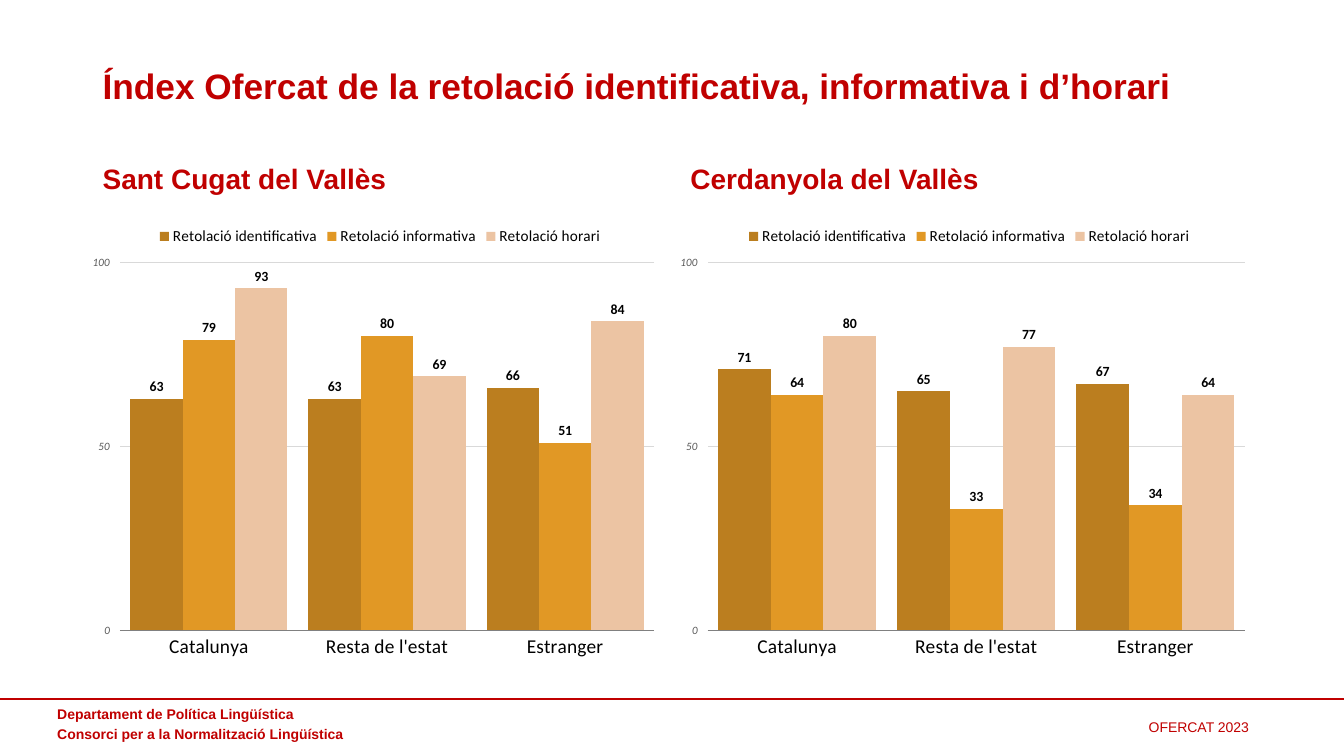
from lxml.etree import SubElement
from pptx import Presentation
from pptx.chart.data import CategoryChartData
from pptx.dml.color import RGBColor
from pptx.enum.chart import (XL_CHART_TYPE, XL_LABEL_POSITION,
                             XL_LEGEND_POSITION, XL_TICK_MARK)
from pptx.enum.shapes import MSO_CONNECTOR
from pptx.enum.text import MSO_ANCHOR, PP_ALIGN
from pptx.oxml import parse_xml
from pptx.oxml.ns import nsdecls, qn
from pptx.util import Pt

COLORS = {"red": "C00000", "black": "000000", "gray": "595959",
          "axis": "808080", "grid": "D9D9D9"}
CATS = ["Catalunya", "Resta de l'estat", "Estranger"]
SERIES = [("Retolació identificativa", "BB7E1F"),
          ("Retolació informativa", "E19825"),
          ("Retolació horari", "ECC4A3")]
# Town, left, width, values by series
TOWNS = [
    ("Sant Cugat del Vallès", 66.2, 406,
     [(63, 63, 66), (79, 80, 51), (93, 69, 84)]),
    ("Cerdanyola del Vallès", 486, 408.2,
     [(71, 65, 67), (64, 33, 34), (80, 77, 64)]),
]
PLOT = {"x": 0.037, "y": 0.093, "w": 0.951, "h": 0.732}
WIDTH, HEIGHT = 960, 540
RULE_TOP = 499


def rgb(code):
    return RGBColor.from_string(code)


def set_font(font, size, color, name="Calibri", bold=False, italic=False):
    font.size = Pt(size)
    font.name = name
    font.bold = bold
    font.italic = italic
    font.color.rgb = rgb(COLORS[color])


def set_line(line, color, width):
    line.color.rgb = rgb(COLORS[color])
    line.width = Pt(width)


def add_text(slide, box, lines, size, bold=True, align=PP_ALIGN.LEFT,
             anchor=MSO_ANCHOR.TOP, gap=0.9):
    frame = slide.shapes.add_textbox(*map(Pt, box)).text_frame
    frame.word_wrap = True
    frame.vertical_anchor = anchor
    frame.text = "\n".join(lines)
    for para in frame.paragraphs:
        para.alignment = align
        para.line_spacing = gap
        for run in para.runs:
            set_font(run.font, size, "red", "Arial", bold)


def add_rule(slide):
    rule = slide.shapes.add_connector(
        MSO_CONNECTOR.STRAIGHT, Pt(0), Pt(RULE_TOP), Pt(WIDTH), Pt(RULE_TOP))
    set_line(rule.line, "red", 1.5)
    SubElement(rule.element.spPr, qn("a:effectLst"))


def set_frame(chart):
    """Clear the chart's background and fix the inner plot area."""
    root = chart.element
    root.find(qn("c:chart")).addnext(parse_xml(
        f'<c:spPr {nsdecls("c", "a")}><a:noFill/>'
        '<a:ln><a:noFill/></a:ln></c:spPr>'))
    area = root.find(".//" + qn("c:plotArea"))
    for old in area.findall(qn("c:layout")):
        area.remove(old)
    modes = '<c:xMode val="edge"/><c:yMode val="edge"/>'
    sizes = "".join(f'<c:{key} val="{val}"/>' for key, val in PLOT.items())
    area.insert(0, parse_xml(
        f'<c:layout {nsdecls("c")}><c:manualLayout>'
        f'<c:layoutTarget val="inner"/>{modes}{sizes}'
        '</c:manualLayout></c:layout>'))


def style_axes(chart):
    cat = chart.category_axis
    cat.major_tick_mark = XL_TICK_MARK.NONE
    set_font(cat.tick_labels.font, 14, "black")
    set_line(cat.format.line, "axis", 0.75)
    val = chart.value_axis
    val.minimum_scale, val.maximum_scale, val.major_unit = 0, 100, 50
    val.major_tick_mark = XL_TICK_MARK.OUTSIDE
    set_font(val.tick_labels.font, 8, "gray", italic=True)
    val.format.line.fill.background()
    set_line(val.major_gridlines.format.line, "grid", 0.75)


def style_bars(chart):
    plot = chart.plots[0]
    plot.gap_width = 40
    plot.overlap = 0
    plot.vary_by_categories = False
    for bars, (_, color) in zip(plot.series, SERIES):
        bars.format.fill.solid()
        bars.format.fill.fore_color.rgb = rgb(color)
        bars.invert_if_negative = False
        tags = bars.data_labels
        tags.show_value = True
        tags.position = XL_LABEL_POSITION.OUTSIDE_END
        tags.number_format = "#,##0"
        tags.number_format_is_linked = False
        set_font(tags.font, 10, "black", bold=True)


def add_bars(slide, box, rows):
    data = CategoryChartData()
    data.categories = CATS
    for (name, _), vals in zip(SERIES, rows):
        data.add_series(name, vals)
    chart = slide.shapes.add_chart(
        XL_CHART_TYPE.COLUMN_CLUSTERED, *map(Pt, box), data).chart
    chart.has_title = False
    set_font(chart.font, 10, "black")
    chart.has_legend = True
    chart.legend.position = XL_LEGEND_POSITION.TOP
    chart.legend.include_in_layout = True
    set_font(chart.legend.font, 11, "black")
    style_axes(chart)
    style_bars(chart)
    set_frame(chart)


def main():
    deck = Presentation()
    deck.slide_width, deck.slide_height = Pt(WIDTH), Pt(HEIGHT)
    slide = deck.slides.add_slide(deck.slide_layouts[6])
    add_rule(slide)
    add_text(slide, (33.8, RULE_TOP, 237, 34.6),
             ["Departament de Política Lingüística",
              "Consorci per a la Normalització Lingüística"], 10, gap=1.14)
    add_text(slide, (419, 508.3, 480.2, 20.2), ["OFERCAT 2023"], 10,
             bold=False, align=PP_ALIGN.RIGHT, gap=1.14)
    add_text(slide, (66.2, 28.8, 828, 67.7),
             ["Índex Ofercat de la retolació identificativa, "
              "informativa i d’horari"], 25.2, anchor=MSO_ANCHOR.MIDDLE)
    for town, left, width, rows in TOWNS:
        add_text(slide, (left, 103, width, 40.3), [town], 20,
                 anchor=MSO_ANCHOR.BOTTOM)
        add_bars(slide, (left, 154, width, 359.3), rows)
    deck.save("out.pptx")


if __name__ == "__main__":
    main()
